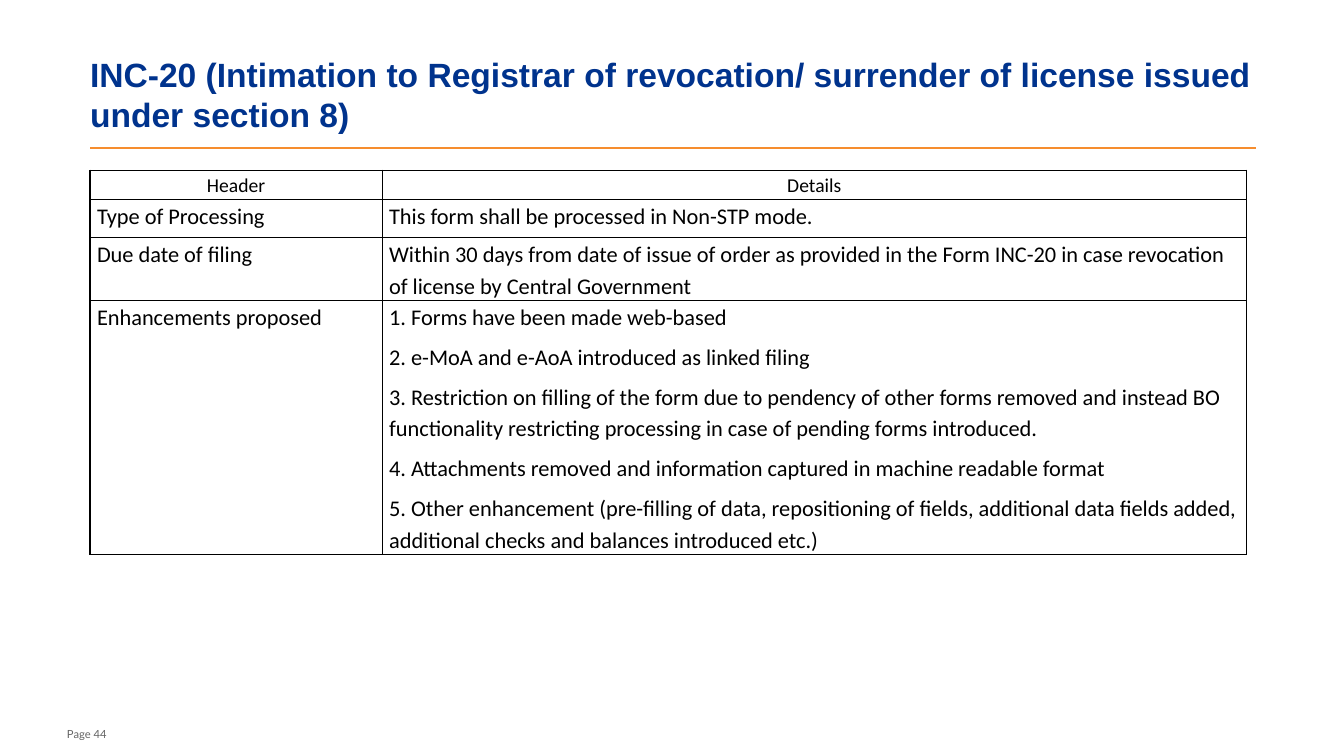
from lxml import etree
from pptx import Presentation
from pptx import util as u
from pptx.dml.color import RGBColor
from pptx.enum import shapes, text
from pptx.oxml.ns import qn

TITLE = ("INC-20 (Intimation to Registrar of revocation/ surrender of license "
         "issued under section 8)")
PAGE_LABEL = "Page 44"
HEADINGS = ("Header", "Details")
DETAILS = [
    ("Type of Processing", ["This form shall be processed in Non-STP mode."]),
    ("Due date of filing", [
        "Within 30 days from date of issue of order as provided in the Form "
        "INC-20 in case revocation of license by Central Government"]),
    ("Enhancements proposed", [
        "1. Forms have been made web-based",
        "2. e-MoA and e-AoA introduced as linked filing",
        "3. Restriction on filling of the form due to pendency of other forms "
        "removed and instead BO functionality restricting processing in case "
        "of pending forms introduced.",
        "4. Attachments removed and information captured in machine readable format",
        "5. Other enhancement (pre-filling of data, repositioning of fields, "
        "additional data fields added, additional checks and balances "
        "introduced etc.)"]),
]
COLUMN_WIDTHS = (292, 864)
ROW_HEIGHTS = (29, 38, 63, 254)
LEFT = 90
BLACK, NAVY, ORANGE, GREY = "000000", "00338D", "F68D2E", "646464"
EMU_PER_PX = 9080


def px(length):
    return u.Emu(length * EMU_PER_PX)


def rgb(value):
    return RGBColor.from_string(value)


def write(frame, lines, size, font="Calibri", color=BLACK, bold=False,
          align=text.PP_ALIGN.LEFT, spacing=1.0, gap=0, inset=0,
          anchor=text.MSO_ANCHOR.TOP):
    """Fill a text frame or table cell with one paragraph per line."""
    frame.margin_left = frame.margin_right = px(inset)
    frame.margin_top = frame.margin_bottom = 0
    frame.vertical_anchor = anchor
    body = getattr(frame, "text_frame", frame)
    body.word_wrap = True
    for index, line in enumerate(lines):
        para = body.add_paragraph() if index else body.paragraphs[0]
        para.alignment, para.line_spacing = align, spacing
        para.space_before = u.Pt(gap if index else 0)
        span = para.add_run()
        span.text = line
        span.font.name, span.font.size, span.font.bold = font, u.Pt(size), bold
        span.font.color.rgb = rgb(color)


def add_borders(cell):
    properties = cell._tc.get_or_add_tcPr()
    for index, side in enumerate(("lnL", "lnR", "lnT", "lnB")):
        line = etree.Element(qn(f"a:{side}"), w=str(u.Pt(1)))
        fill = etree.SubElement(line, qn("a:solidFill"))
        etree.SubElement(fill, qn("a:srgbClr"), val=BLACK)
        properties.insert(index, line)


def add_details_table(page):
    grid = page.shapes.add_table(
        len(ROW_HEIGHTS), len(COLUMN_WIDTHS), px(LEFT), px(170),
        px(sum(COLUMN_WIDTHS)), px(sum(ROW_HEIGHTS))).table
    grid.first_row = grid.horz_banding = False
    for column, width in zip(grid.columns, COLUMN_WIDTHS):
        column.width = px(width)
    for row, height in zip(grid.rows, ROW_HEIGHTS):
        row.height = px(height)
    for cell, heading in zip(grid.rows[0].cells, HEADINGS):
        write(cell, [heading], 14, align=text.PP_ALIGN.CENTER,
              spacing=1.15, inset=7)
    for index, (label, lines) in enumerate(DETAILS, start=1):
        for cell, content in zip(grid.rows[index].cells, ([label], lines)):
            write(cell, content, 16, spacing=1.15, gap=6, inset=7)
    for cell in grid.iter_cells():
        cell.fill.background()
        add_borders(cell)


def main():
    deck = Presentation()
    deck.slide_width, deck.slide_height = u.Inches(13.34), u.Inches(7.5)
    page = deck.slides.add_slide(deck.slide_layouts[5])

    title = page.shapes.title
    title.left, title.top, title.width, title.height = map(px, (LEFT, 40, 1162, 108))
    title.text_frame.auto_size = text.MSO_AUTO_SIZE.NONE
    write(title.text_frame, [TITLE], 24, font="Arial", color=NAVY, bold=True,
          anchor=text.MSO_ANCHOR.MIDDLE)

    rule = page.shapes.add_connector(
        shapes.MSO_CONNECTOR.STRAIGHT, px(LEFT), px(148), px(1255), px(148))
    rule.line.color.rgb, rule.line.width = rgb(ORANGE), u.Pt(1)
    etree.SubElement(rule._element.spPr, qn("a:effectLst"))

    add_details_table(page)

    footer = page.shapes.add_textbox(*map(px, (67, 718, 98, 22)))
    write(footer.text_frame, [PAGE_LABEL], 8, font="Lato", color=GREY,
          anchor=text.MSO_ANCHOR.BOTTOM)
    deck.save("out.pptx")


if __name__ == "__main__":
    main()
